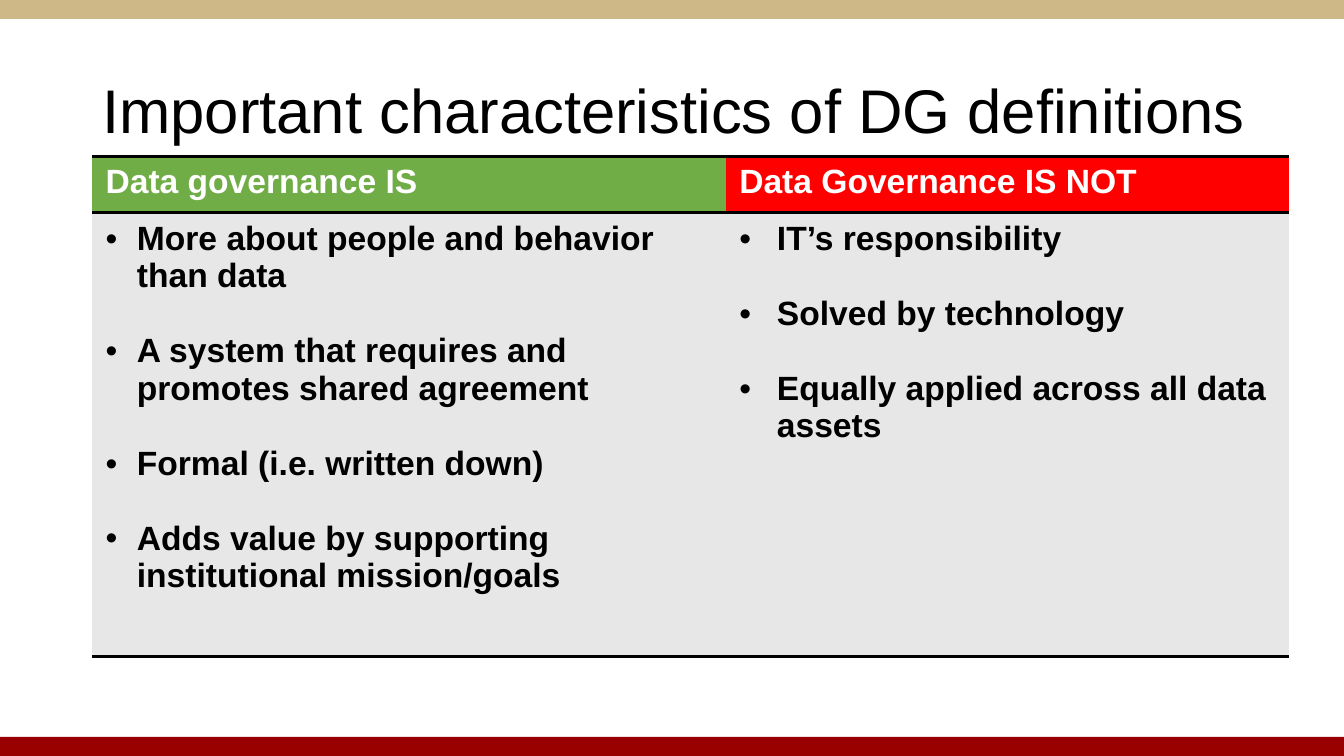
from dataclasses import dataclass

from lxml import etree
from pptx import Presentation
from pptx import util as u
from pptx.dml import color
from pptx.enum import shapes, text
from pptx.oxml import ns


@dataclass(frozen=True)
class Theme:
    font: str = "Arial"
    ink: str = "000000"
    white: str = "FFFFFF"
    gold: str = "CEB888"
    red: str = "990000"
    yes: str = "70AD47"
    no: str = "FF0000"
    pale: str = "E7E7E7"
    title: int = 44
    body: int = 24
    gap: float = 26.8
    rule: int = 2


THEME = Theme()
WIDE, HIGH, BAR = 33.87, 19.05, 0.48

# heading, heading fill, column width, bullet indent, points
SIDES = [
    ("Data governance IS", THEME.yes, 15.97, 0.79, [
        "More about people and behavior than data",
        "A system that requires and promotes shared agreement",
        "Formal (i.e. written down)",
        "Adds value by supporting institutional mission/goals",
    ]),
    ("Data Governance IS NOT", THEME.no, 14.18, 0.95, [
        "IT’s responsibility",
        "Solved by technology",
        "Equally applied across all data assets",
    ]),
]


def rgb(tone):
    return color.RGBColor.from_string(tone)


def style(para, size, tone, bold=False):
    font = para.font
    font.name, font.size, font.bold = THEME.font, u.Pt(size), bold
    font.color.rgb = rgb(tone)


def add(parent, tag, **attrs):
    return etree.SubElement(parent, ns.qn(tag), **attrs)


def band(slide, top, tone):
    bar = slide.shapes.add_shape(
        shapes.MSO_SHAPE.RECTANGLE, 0, u.Cm(top), u.Cm(WIDE), u.Cm(BAR))
    bar.shadow.inherit = False
    bar.fill.solid()
    bar.fill.fore_color.rgb = rgb(tone)
    bar.line.fill.background()


def head(slide, box, words):
    frame = slide.shapes.add_textbox(*map(u.Cm, box)).text_frame
    frame.word_wrap = True
    frame.vertical_anchor = text.MSO_ANCHOR.MIDDLE
    para = frame.paragraphs[0]
    para.text = words
    para.line_spacing = 0.9
    style(para, THEME.title, THEME.ink)


def dress(cell, tone):
    """Give a cell its margins, rules above and below, and fill."""
    cell.margin_left = cell.margin_right = u.Cm(0.33)
    cell.margin_top = cell.margin_bottom = u.Cm(0.18)
    props = cell._tc.get_or_add_tcPr()
    for side in "LR":
        add(add(props, f"a:ln{side}", w="0"), "a:noFill")
    for side in "TB":
        line = add(props, f"a:ln{side}", w=str(u.Pt(THEME.rule)))
        add(add(line, "a:solidFill"), "a:srgbClr", val=THEME.ink)
    cell.fill.solid()
    cell.fill.fore_color.rgb = rgb(tone)


def bullets(frame, items, indent):
    for i, item in enumerate(items):
        para = frame.add_paragraph() if i else frame.paragraphs[0]
        para.text = item
        props = para._p.get_or_add_pPr()
        props.set("marL", str(u.Cm(indent)))
        props.set("indent", str(-u.Cm(indent)))
        if i:
            para.space_before = u.Pt(THEME.gap)
        add(props, "a:buFont", typeface=THEME.font)
        add(props, "a:buChar", char="•")
        style(para, THEME.body, THEME.ink, True)


def compare(slide, box, sides, rows):
    table = slide.shapes.add_table(
        len(rows), len(sides), *map(u.Cm, box)).table
    table.first_row = table.horz_banding = False
    for row, tall in zip(table.rows, rows):
        row.height = u.Cm(tall)
    for i, (label, tone, width, indent, items) in enumerate(sides):
        table.columns[i].width = u.Cm(width)
        top, body = table.cell(0, i), table.cell(1, i)
        dress(top, tone)
        dress(body, THEME.pale)
        para = top.text_frame.paragraphs[0]
        para.text = label
        style(para, THEME.body, THEME.white, True)
        bullets(body.text_frame, items, indent)


def main():
    deck = Presentation()
    deck.slide_width, deck.slide_height = u.Cm(WIDE), u.Cm(HIGH)
    slide = deck.slides.add_slide(deck.slide_layouts[6])
    band(slide, HIGH - BAR, THEME.red)
    band(slide, 0, THEME.gold)
    head(slide, (2.33, 1.02, 30.53, 3.68),
         "Important characteristics of DG definitions")
    compare(slide, (2.33, 3.94, 30.15, 12.6), SIDES, (1.42, 11.18))
    deck.save("out.pptx")


if __name__ == "__main__":
    main()
